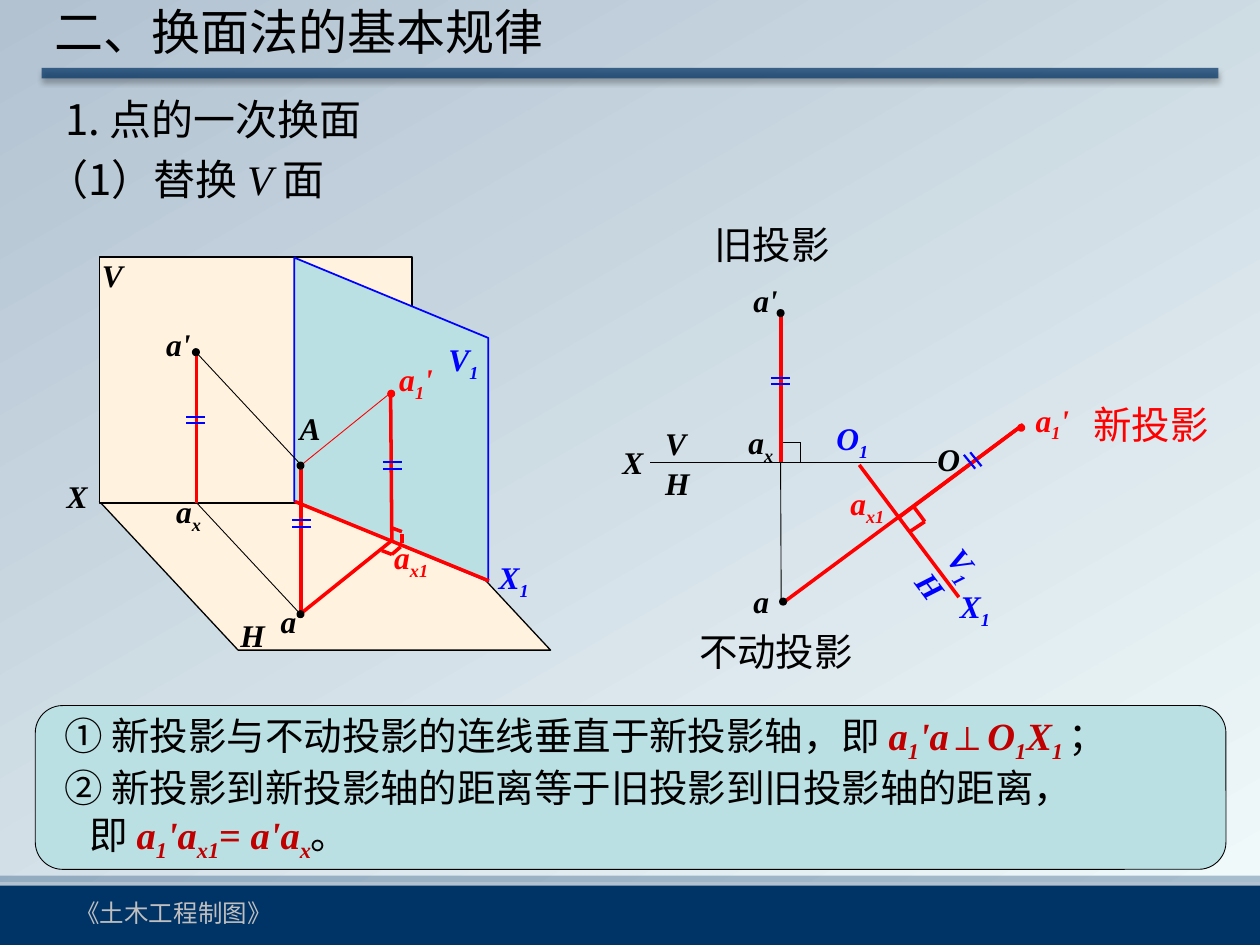
from lxml.etree import SubElement
from pptx import Presentation
from pptx.dml.color import RGBColor
from pptx.enum.shapes import MSO_CONNECTOR, MSO_SHAPE
from pptx.enum.text import MSO_ANCHOR, MSO_AUTO_SIZE, PP_ALIGN
from pptx.oxml.ns import qn
from pptx.util import Inches, Pt

BLACK = RGBColor(0x00, 0x00, 0x00)
RED = RGBColor(0xFF, 0x00, 0x00)
BLUE = RGBColor(0x00, 0x00, 0xFF)
NAVY = RGBColor(0x00, 0x33, 0x66)
GRAY = RGBColor(0xBF, 0xBF, 0xBF)
CREAM = RGBColor(0xFF, 0xF2, 0xDE)
TEAL = RGBColor(0xBB, 0xE0, 0xE3)
DARK_RED = RGBColor(0xC0, 0x00, 0x00)
SKY_DARK = RGBColor(0xB2, 0xC2, 0xD1)
SKY_LIGHT = RGBColor(0xEF, 0xF9, 0xFA)

HAN = "Noto Sans CJK SC"
ROMAN = "Times New Roman"

# Thin construction lines: x1, y1, x2, y2
THIN_BLACK = [
    (2.39, 3.7, 2.39, 4.88), (1.56, 3.99, 2.39, 4.88),
    (1.56, 2.8, 1.56, 3.98), (1.56, 2.8, 2.38, 3.68),
    (6.19, 2.49, 6.2, 4.78), (5.16, 3.67, 7.44, 3.67),
    (6.2, 3.51, 6.35, 3.51), (6.35, 3.51, 6.35, 3.67),
]
THIN_RED = [(2.38, 3.7, 3.11, 3.11)]
THICK_RED = [
    # Spatial view: new axis, projectors and right-angle mark
    (2.34, 3.98, 3.88, 4.61), (2.4, 4.86, 3.11, 4.29), (3.1, 3.12, 3.11, 4.3),
    (3.11, 4.19, 3.19, 4.22), (3.03, 4.37, 3.11, 4.4),
    (3.18, 4.34, 3.11, 4.4), (3.19, 4.24, 3.19, 4.31),
    (1.56, 2.81, 1.56, 3.99), (2.39, 3.7, 2.39, 4.88),
    # Unfolded view: projectors, new axis and right-angle mark
    (6.2, 2.49, 6.2, 3.67), (8.08, 3.4, 6.22, 4.78), (8.12, 3.37, 7.13, 4.11),
    (7.22, 4.22, 7.34, 4.14), (7.25, 4.02, 7.34, 4.14), (6.82, 3.69, 7.61, 4.74),
]
EQUAL_MARKS = [(1.48, 3.31), (2.32, 4.13), (3.04, 3.67), (6.12, 3.0)]
SLANTED_MARKS = [(7.7, 3.59, 7.79, 3.7), (7.65, 3.61, 7.74, 3.72)]

POINTS = [
    (1.53, 2.77, BLACK), (2.36, 4.85, BLACK), (2.36, 3.67, BLACK), (3.08, 3.1, RED),
    (6.17, 2.46, BLACK), (6.19, 4.75, BLACK), (8.08, 3.37, RED),
]

# Labels: text with subscripts between bars, left, top, width, colour
SPATIAL_LABELS = [
    ("V", 0.71, 1.98, 0.38, BLACK), ("H", 1.81, 4.84, 0.4, BLACK),
    ("X", 0.43, 3.74, 0.37, BLACK), ("X|1", 3.86, 4.38, 0.47, BLUE),
    ("V|1", 3.46, 2.65, 0.45, BLUE), ("a'", 1.22, 2.53, 0.4, BLACK),
    ("a", 2.13, 4.73, 0.33, BLACK), ("A", 2.28, 3.2, 0.37, BLACK),
    ("a|x", 1.3, 3.86, 0.41, BLACK), ("a|1|'", 3.07, 2.81, 0.48, RED),
    ("a|x1", 3.03, 4.22, 0.5, RED),
]
UNFOLDED_LABELS = [
    ("a'", 5.88, 2.18, 0.45, BLACK), ("a", 5.88, 4.57, 0.45, BLACK),
    ("X", 4.84, 3.47, 0.45, BLACK), ("a|x", 5.84, 3.31, 0.45, BLACK),
    ("H", 5.18, 3.63, 0.45, BLACK), ("V", 5.18, 3.32, 0.45, BLACK),
    ("O", 7.34, 3.44, 0.45, BLACK), ("a|1|'", 8.12, 3.13, 0.49, RED),
    ("a|x1", 6.65, 3.79, 0.49, RED), ("O|1", 6.54, 3.28, 0.49, BLUE),
    ("X|1", 7.52, 4.61, 0.49, BLUE),
]
AXIS_LABELS = [("H", 7.18, 4.47, 0.45, BLUE), ("V|1", 7.43, 4.28, 0.45, BLUE)]


def add_spans(para, text, size, color=BLACK, face=HAN, bold=False, italic=False):
    """Write text; every second part between bars is a subscript."""
    for index, part in enumerate(text.split("|")):
        if not part:
            continue
        span = para.add_run()
        span.text = part
        font = span.font
        font.size, font.bold, font.italic, font.name = Pt(size), bold, italic, face
        font.color.rgb = color
        properties = font._element
        SubElement(properties, qn("a:ea")).set("typeface", face)
        if index % 2:
            properties.set("baseline", "-25000")


def add_box(page, left, top, width, height, anchor=MSO_ANCHOR.TOP, wrap=True):
    box = page.shapes.add_textbox(Inches(left), Inches(top), Inches(width), Inches(height))
    frame = box.text_frame
    frame.word_wrap = wrap
    frame.auto_size = MSO_AUTO_SIZE.SHAPE_TO_FIT_TEXT
    frame.vertical_anchor = anchor
    return box


def add_label(page, text, left, top, width, color, wrap=True, rotation=0):
    box = add_box(page, left, top, width, 0.4, wrap=wrap)
    box.rotation = rotation
    add_spans(box.text_frame.paragraphs[0], text, 18, color, ROMAN, True, True)


def add_caption(page, text, left, top, width, color=BLACK):
    box = add_box(page, left, top, width, 0.47, MSO_ANCHOR.MIDDLE)
    add_spans(box.text_frame.paragraphs[0], text, 22, color)


def add_shape(page, kind, left, top, width, height, fill, line=None, weight=1):
    shape = page.shapes.add_shape(kind, Inches(left), Inches(top), Inches(width), Inches(height))
    shape.shadow.inherit = False
    shape.fill.solid()
    shape.fill.fore_color.rgb = fill
    if line is None:
        shape.line.fill.background()
    else:
        shape.line.color.rgb = line
        shape.line.width = Pt(weight)
    return shape


def add_line(page, ends, color, weight):
    line = page.shapes.add_connector(MSO_CONNECTOR.STRAIGHT, *(Inches(end) for end in ends))
    line.line.color.rgb = color
    line.line.width = Pt(weight)
    SubElement(line._element.spPr, qn("a:effectLst"))
    return line


def set_alpha(parent, percent):
    color = next(parent.iter(qn("a:srgbClr")))
    SubElement(color, qn("a:alpha")).set("val", str(percent * 1000))


def add_backdrop(page):
    sky = add_shape(page, MSO_SHAPE.RECTANGLE, 0, 0, 10, 7, SKY_LIGHT)
    sky.fill.gradient()
    sky.fill.gradient_angle = 300
    for stop, color in zip(sky.fill.gradient_stops, (SKY_DARK, SKY_LIGHT)):
        stop.color.rgb = color
    band = add_shape(page, MSO_SHAPE.RECTANGLE, 0, 6.95, 10, 0.17, NAVY)
    set_alpha(band._element.spPr, 30)
    add_shape(page, MSO_SHAPE.RECTANGLE, 0, 7.03, 10, 0.47, NAVY)
    footer = add_box(page, 0.5, 7.08, 8.17, 0.34)
    add_spans(footer.text_frame.paragraphs[0], "《土木工程制图》", 14, GRAY)

    # Rule under the title, with a soft shadow
    rule = add_line(page, (0.33, 0.58, 9.67, 0.58), NAVY, 6)
    set_alpha(rule._element.spPr, 70)
    effects = rule._element.spPr.find(qn("a:effectLst"))
    shadow = SubElement(effects, qn("a:outerShdw"), blurRad=str(Pt(3)), dist=str(Pt(2)),
                        dir="5400000", rotWithShape="0")
    SubElement(shadow, qn("a:srgbClr")).set("val", str(BLACK))
    set_alpha(shadow, 40)


def add_headings(page):
    title = page.shapes.title
    title.left, title.top = Inches(0.33), Inches(-0.04)
    title.width, title.height = Inches(9.33), Inches(0.57)
    title.text_frame.vertical_anchor = MSO_ANCHOR.TOP
    title.text_frame.auto_size = MSO_AUTO_SIZE.NONE
    para = title.text_frame.paragraphs[0]
    para.alignment = PP_ALIGN.LEFT
    add_spans(para, "二、换面法的基本规律", 28)

    frame = add_box(page, 0.27, 0.63, 3.05, 1.02, MSO_ANCHOR.MIDDLE).text_frame
    first, second = frame.paragraphs[0], frame.add_paragraph()
    first.line_spacing = second.line_spacing = 1.2
    first._p.get_or_add_pPr().set("marL", str(Inches(0.15)))
    add_spans(first, "1. 点的一次换面", 24)
    add_spans(second, "（1）替换 ", 24)
    add_spans(second, "V ", 24, face=ROMAN, italic=True)
    add_spans(second, "面", 24)


def add_planes(page):
    ground = add_shape(page, MSO_SHAPE.PARALLELOGRAM, 0.79, 3.98, 3.58, 1.18, CREAM, BLACK, 0.75)
    ground.adjustments[0] = 0.932
    ground._element.spPr.xfrm.set("flipH", "1")
    add_shape(page, MSO_SHAPE.RECTANGLE, 0.79, 2.04, 2.48, 1.95, CREAM, BLACK)
    new_plane = add_shape(page, MSO_SHAPE.PARALLELOGRAM, 1.82, 2.56, 2.57, 1.54, TEAL, BLUE)
    new_plane.adjustments[0] = 0.414
    new_plane.rotation = 90


def add_rules_panel(page):
    panel = add_shape(page, MSO_SHAPE.ROUNDED_RECTANGLE, 0.28, 5.6, 9.45, 1.3, TEAL, BLACK, 0.5)
    frame = panel.text_frame
    frame.word_wrap = True
    frame.vertical_anchor = MSO_ANCHOR.MIDDLE
    math, upright = (DARK_RED, ROMAN, True, True), (DARK_RED, ROMAN, True, False)
    plain = (BLACK,)
    rules = [
        (0.07, [("① 新投影与不动投影的连线垂直于新投影轴，即 ", plain), ("a|1|'a", math),
                ("⊥", upright), ("O|1|X|1 ", math), ("；", plain)]),
        (0.07, [("② 新投影到新投影轴的距离等于旧投影到旧投影轴的距离，", plain)]),
        (0.27, [("即 ", plain), ("a|1|'a|x1", math), ("= ", upright),
                ("a'a|x", math), ("。", plain)]),
    ]
    for index, (indent, spans) in enumerate(rules):
        para = frame.add_paragraph() if index else frame.paragraphs[0]
        para.alignment = PP_ALIGN.JUSTIFY
        para._p.get_or_add_pPr().set("marL", str(Inches(indent)))
        for text, style in spans:
            add_spans(para, text, 22, *style)


def main():
    deck = Presentation()
    deck.slide_width, deck.slide_height = Inches(10), Inches(7.5)
    page = deck.slides.add_slide(deck.slide_layouts[5])
    add_backdrop(page)
    # Bring the title in front of the backdrop
    page.shapes._spTree.append(page.shapes.title._element)
    add_headings(page)
    add_planes(page)

    # Lines and points of both views
    for lines, color, weight in ((THIN_BLACK, BLACK, 0.5), (THIN_RED, RED, 0.5),
                                 (THICK_RED, RED, 2)):
        for ends in lines:
            add_line(page, ends, color, weight)
    for left, top, color in POINTS:
        add_shape(page, MSO_SHAPE.OVAL, left, top, 0.05, 0.05, color, color)

    # Marks of equal length
    level_marks = [(x, y + gap, x + 0.15, y + gap) for x, y in EQUAL_MARKS for gap in (0, 0.05)]
    for ends in level_marks + SLANTED_MARKS:
        add_line(page, ends, BLUE, 1.25)

    # Labels and captions
    for label in SPATIAL_LABELS:
        add_label(page, *label, wrap=False)
    for label in UNFOLDED_LABELS:
        add_label(page, *label)
    for label in AXIS_LABELS:
        add_label(page, *label, rotation=53.1)
    add_caption(page, "旧投影", 5.57, 1.7, 1.2)
    add_caption(page, "不动投影", 5.45, 4.93, 1.51)
    add_caption(page, "新投影", 8.58, 3.13, 1.27, RED)

    add_rules_panel(page)
    deck.save("out.pptx")


if __name__ == "__main__":
    main()
